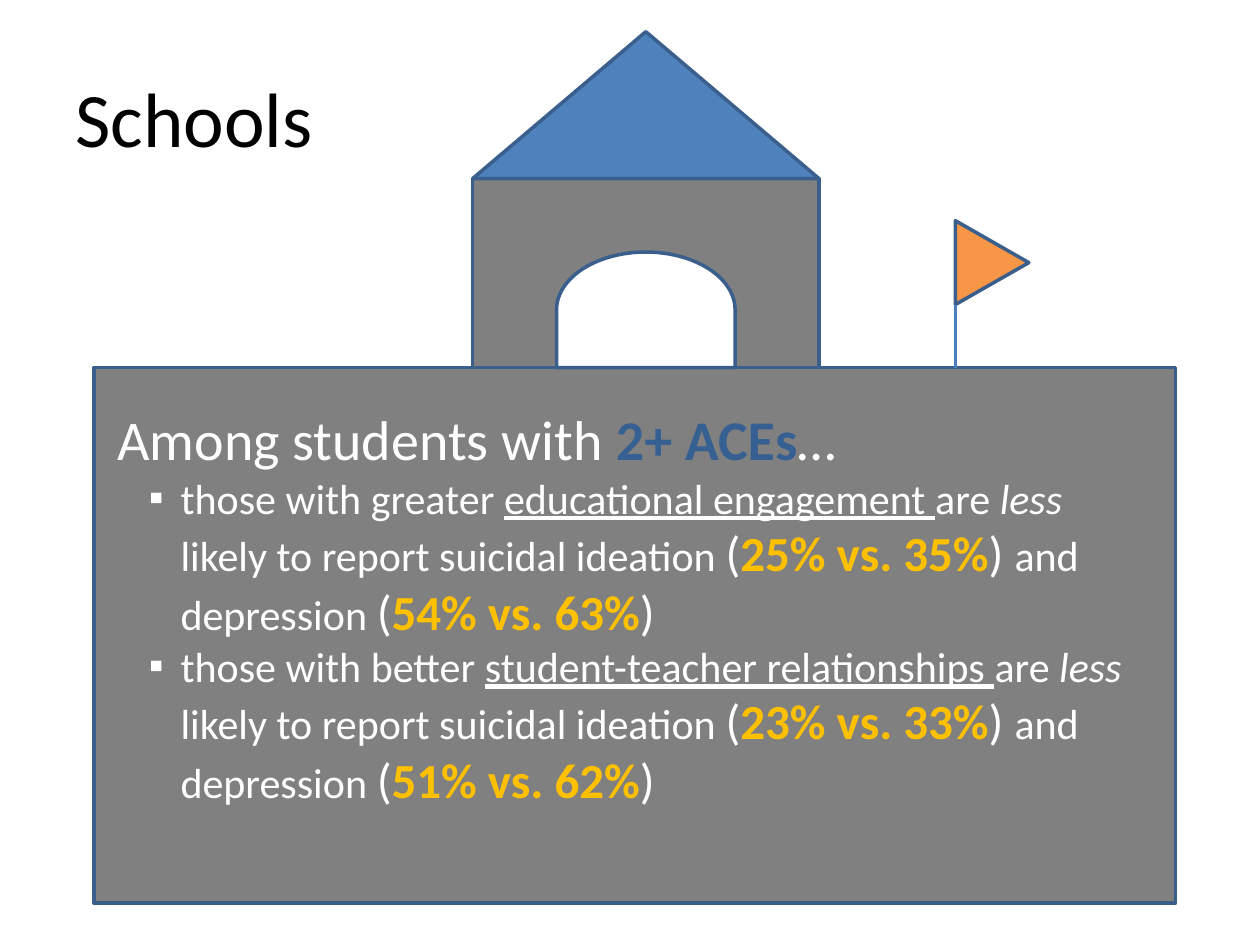
from lxml.etree import SubElement
from pptx import Presentation
from pptx.dml.color import RGBColor
from pptx.enum.shapes import MSO_CONNECTOR, MSO_SHAPE
from pptx.enum.text import MSO_ANCHOR, MSO_AUTO_SIZE
from pptx.oxml.ns import qn
from pptx.util import Cm, Pt

FONT = "Calibri"
WHITE, BLACK, GRAY = "FFFFFF", "000000", "808080"
BLUE, NAVY, OUTLINE, POLE = "4F81BD", "376092", "3A5F8C", "4B7EBC"
ORANGE, GOLD = "F79646", "FFC000"

# Walls of the school, in centimetres
WALL_TOP = 7.41
TOWER_LEFT, TOWER_TOP, TOWER_WIDTH = 9.53, 3.6, 6.98
DOOR_WIDTH, DOOR_HEIGHT = 3.6, 2.33
FLAG_LEFT, FLAG_TOP, FLAG_LENGTH, FLAG_HEIGHT = 19.26, 4.45, 1.48, 1.69

FINDINGS = [
    ("greater", "educational engagement ", "25% vs. 35%", "54% vs. 63%"),
    ("better", "student-teacher relationships ", "23% vs. 33%", "51% vs. 62%"),
]


def color(value):
    return RGBColor.from_string(value)


def add_part(slide, kind, left, top, width, height, fill, rotation=0):
    """Add an outlined shape; the box is the one seen after a quarter turn."""
    if rotation:
        left, top = left + (width - height) / 2, top + (height - width) / 2
        width, height = height, width
    shape = slide.shapes.add_shape(kind, Cm(left), Cm(top), Cm(width), Cm(height))
    shape.rotation = rotation
    shape.shadow.inherit = False
    shape.fill.solid()
    shape.fill.fore_color.rgb = color(fill)
    shape.line.color.rgb = color(OUTLINE)
    shape.line.width = Pt(2)
    return shape


def add_pole(slide, x, top, bottom):
    pole = slide.shapes.add_connector(
        MSO_CONNECTOR.STRAIGHT, Cm(x), Cm(top), Cm(x), Cm(bottom))
    pole.line.color.rgb = color(POLE)
    pole.line.width = Pt(2)
    SubElement(pole.element.spPr, qn("a:effectLst"))


def add_text_box(slide, left, top, width, height):
    box = slide.shapes.add_textbox(Cm(left), Cm(top), Cm(width), Cm(height))
    box.text_frame.word_wrap = True
    return box.text_frame


def add_run(paragraph, text, size, fill=WHITE, bold=False, italic=False, underline=False):
    run = paragraph.add_run()
    run.text = text
    font = run.font
    font.name, font.size = FONT, Pt(size)
    font.bold, font.italic, font.underline = bold, italic, underline
    font.color.rgb = color(fill)


def set_bullet(paragraph):
    properties = paragraph._p.get_or_add_pPr()
    properties.set("marL", str(Cm(1.27)))
    properties.set("indent", str(Cm(-0.64)))
    SubElement(properties, qn("a:buFont"), typeface="Arial")
    SubElement(properties, qn("a:buChar"), char="▪")


def add_finding(text_frame, degree, factor, ideation, depression):
    paragraph = text_frame.add_paragraph()
    paragraph.level = 1
    set_bullet(paragraph)
    add_run(paragraph, f"those with {degree} ", 24)
    add_run(paragraph, factor, 24, underline=True)
    add_run(paragraph, "are ", 24)
    add_run(paragraph, "less", 24, italic=True)
    for lead, rates, closing in (
        (" likely to report suicidal ideation ", ideation, ") "),
        ("and depression ", depression, ")"),
    ):
        add_run(paragraph, lead, 24)
        add_run(paragraph, "(", 28)
        add_run(paragraph, rates, 28, GOLD, bold=True)
        add_run(paragraph, closing, 28)


def add_school(slide):
    # Main building and tower
    add_part(slide, MSO_SHAPE.RECTANGLE, 1.9, WALL_TOP, 21.8, 10.8, GRAY)
    add_part(slide, MSO_SHAPE.RECTANGLE, TOWER_LEFT, TOWER_TOP,
             TOWER_WIDTH, WALL_TOP - TOWER_TOP, GRAY)
    # Doorway centred in the tower, then the roof
    add_part(slide, MSO_SHAPE.FLOWCHART_DELAY,
             TOWER_LEFT + (TOWER_WIDTH - DOOR_WIDTH) / 2, WALL_TOP - DOOR_HEIGHT,
             DOOR_WIDTH, DOOR_HEIGHT, WHITE, rotation=270)
    add_part(slide, MSO_SHAPE.ISOSCELES_TRIANGLE, TOWER_LEFT, 0.64,
             TOWER_WIDTH, TOWER_TOP - 0.64, BLUE)
    # Flag on its pole
    add_part(slide, MSO_SHAPE.ISOSCELES_TRIANGLE, FLAG_LEFT, FLAG_TOP,
             FLAG_LENGTH, FLAG_HEIGHT, ORANGE, rotation=90)
    add_pole(slide, FLAG_LEFT, FLAG_TOP + FLAG_HEIGHT, WALL_TOP)


def main():
    presentation = Presentation()
    presentation.slide_width, presentation.slide_height = Cm(25.4), Cm(19.05)
    slide = presentation.slides.add_slide(presentation.slide_layouts[6])

    # Title
    title = add_text_box(slide, 1.27, 0.76, 22.86, 3.18)
    title.vertical_anchor = MSO_ANCHOR.MIDDLE
    add_run(title.paragraphs[0], "Schools", 44, BLACK)

    add_school(slide)

    # Findings on the front wall
    findings = add_text_box(slide, 2.12, 8.04, 21.38, 8.46)
    findings.auto_size = MSO_AUTO_SIZE.SHAPE_TO_FIT_TEXT
    heading = findings.paragraphs[0]
    add_run(heading, "Among students with ", 32)
    add_run(heading, "2+ ACEs", 32, NAVY, bold=True)
    add_run(heading, "…", 32)
    for finding in FINDINGS:
        add_finding(findings, *finding)

    presentation.save("out.pptx")


if __name__ == "__main__":
    main()
